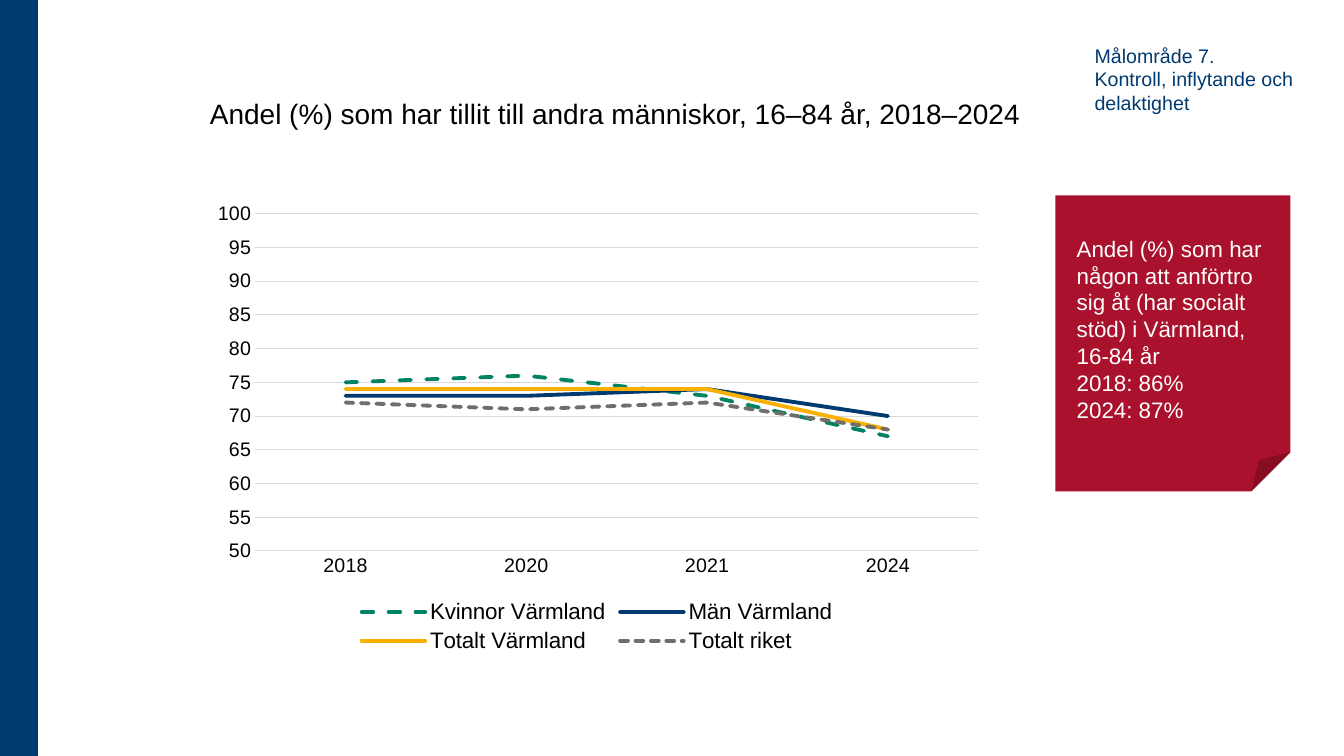
from lxml import etree
from pptx import Presentation
from pptx.chart.data import CategoryChartData
from pptx.dml.color import RGBColor
from pptx.enum.chart import XL_CHART_TYPE, XL_LEGEND_POSITION, XL_MARKER_STYLE, XL_TICK_MARK
from pptx.enum.dml import MSO_LINE
from pptx.enum.shapes import MSO_SHAPE
from pptx.enum.text import MSO_ANCHOR, MSO_AUTO_SIZE, PP_ALIGN
from pptx.oxml.ns import qn
from pptx.util import Emu, Pt

NAVY, RED, GREEN, YELLOW, GREY = "003A70", "AA112C", "008264", "F9B000", "6F6E68"
BLACK, WHITE, GRID = "000000", "FFFFFF", "D9D9D9"


def color(value):
    return RGBColor.from_string(value)


class SlideBuilder:
    font_name = "Arial"
    scale = 9525  # EMU in one px, 96 px to the inch

    def __init__(self, deck, width, height):
        deck.slide_width, deck.slide_height = self.px(width, height)
        self.page = deck.slides.add_slide(deck.slide_layouts[6])

    def px(self, *lengths):
        return [Emu(length * self.scale) for length in lengths]

    def style(self, font, size, tint):
        font.name = self.font_name
        font.size = Pt(size)
        font.color.rgb = color(tint)

    def shape(self, kind, area, fill):
        shape = self.page.shapes.add_shape(kind, *self.px(*area))
        shape.shadow.inherit = False
        shape.fill.solid()
        shape.fill.fore_color.rgb = color(fill)
        shape.line.fill.background()

    def text(self, area, lines, size, tint, align=PP_ALIGN.LEFT,
             anchor=MSO_ANCHOR.TOP, fit=MSO_AUTO_SIZE.SHAPE_TO_FIT_TEXT):
        box = self.page.shapes.add_textbox(*self.px(*area))
        frame = box.text_frame
        frame.word_wrap = True
        frame.auto_size = fit
        frame.vertical_anchor = anchor
        frame.text = "\n".join(lines)
        for para in frame.paragraphs:
            para.alignment = align
            for span in para.runs:
                self.style(span.font, size, tint)

    def line_chart(self, area, categories, series, low, high, step, layout):
        data = CategoryChartData(number_format="0")
        data.categories = categories
        for name, values, tint, dash in series:
            data.add_series(name, values)
        chart = self.page.shapes.add_chart(
            XL_CHART_TYPE.LINE, *self.px(*area), data).chart
        chart.has_title = False
        self.style(chart.font, 10, BLACK)

        # Legend
        chart.has_legend = True
        chart.legend.position = XL_LEGEND_POSITION.BOTTOM
        chart.legend.include_in_layout = False
        self.style(chart.legend.font, 16, BLACK)

        # Axes and grid
        for axis in (chart.category_axis, chart.value_axis):
            axis.major_tick_mark = axis.minor_tick_mark = XL_TICK_MARK.NONE
            self.style(axis.tick_labels.font, 14, BLACK)
        scale = chart.value_axis
        scale.minimum_scale, scale.maximum_scale, scale.major_unit = low, high, step
        scale.tick_labels.number_format = "0"
        scale.tick_labels.number_format_is_linked = False
        scale.format.line.fill.background()
        scale.has_major_gridlines = True
        for line in (scale.major_gridlines.format.line, chart.category_axis.format.line):
            line.color.rgb = color(GRID)
            line.width = Pt(0.75)

        # Series lines
        plot = chart.plots[0]
        plot.vary_by_categories = False
        for item, (name, values, tint, dash) in zip(plot.series, series):
            item.smooth = False
            item.marker.style = XL_MARKER_STYLE.NONE
            line = item.format.line
            line.color.rgb = color(tint)
            line.width = Pt(2.75)
            if dash:
                line.dash_style = dash
            item.format.line._get_or_add_ln().set("cap", "rnd")

        # Fixed inner plot area, as fractions of the chart
        plot_area = chart._chartSpace.chart.plotArea
        for old in plot_area.findall(qn("c:layout")):
            plot_area.remove(old)
        holder = etree.Element(qn("c:layout"))
        plot_area.insert(0, holder)
        manual = etree.SubElement(holder, qn("c:manualLayout"))
        settings = {"layoutTarget": "inner", "xMode": "edge", "yMode": "edge", **layout}
        for tag, value in settings.items():
            etree.SubElement(manual, qn(f"c:{tag}")).set("val", str(value))


def main():
    deck = Presentation()
    slide = SlideBuilder(deck, 1280, 720)

    # Side band and headings
    slide.shape(MSO_SHAPE.RECTANGLE, (0, 0, 36, 720), NAVY)
    slide.text((190, 51, 792, 78),
               ["Andel (%) som har tillit till andra människor, 16–84 år, 2018–2024"],
               20, BLACK, PP_ALIGN.CENTER, MSO_ANCHOR.BOTTOM, MSO_AUTO_SIZE.NONE)
    slide.text((1033, 37, 212, 78),
               ["Målområde 7.", "Kontroll, inflytande och delaktighet"], 14, NAVY)

    # Trust over time
    series = [
        ("Kvinnor Värmland", (75, 76, 73, 67), GREEN, MSO_LINE.DASH),
        ("Män Värmland", (73, 73, 74, 70), NAVY, None),
        ("Totalt Värmland", (74, 74, 74, 68), YELLOW, None),
        ("Totalt riket", (72, 71, 72, 68), GREY, MSO_LINE.SQUARE_DOT),
    ]
    slide.line_chart((190, 186, 757, 440), ["2018", "2020", "2021", "2024"], series,
                     50, 100, 5, {"x": 0.07, "y": 0.04, "w": 0.91, "h": 0.73})

    # Note on social support
    slide.shape(MSO_SHAPE.FOLDED_CORNER, (1005, 186, 224, 282), RED)
    slide.text((1016, 219, 204, 191),
               ["Andel (%) som har någon att anförtro sig åt (har socialt stöd) i Värmland, 16-84 år",
                "2018: 86%", "2024: 87%"], 16, WHITE)

    deck.save("out.pptx")


if __name__ == "__main__":
    main()
